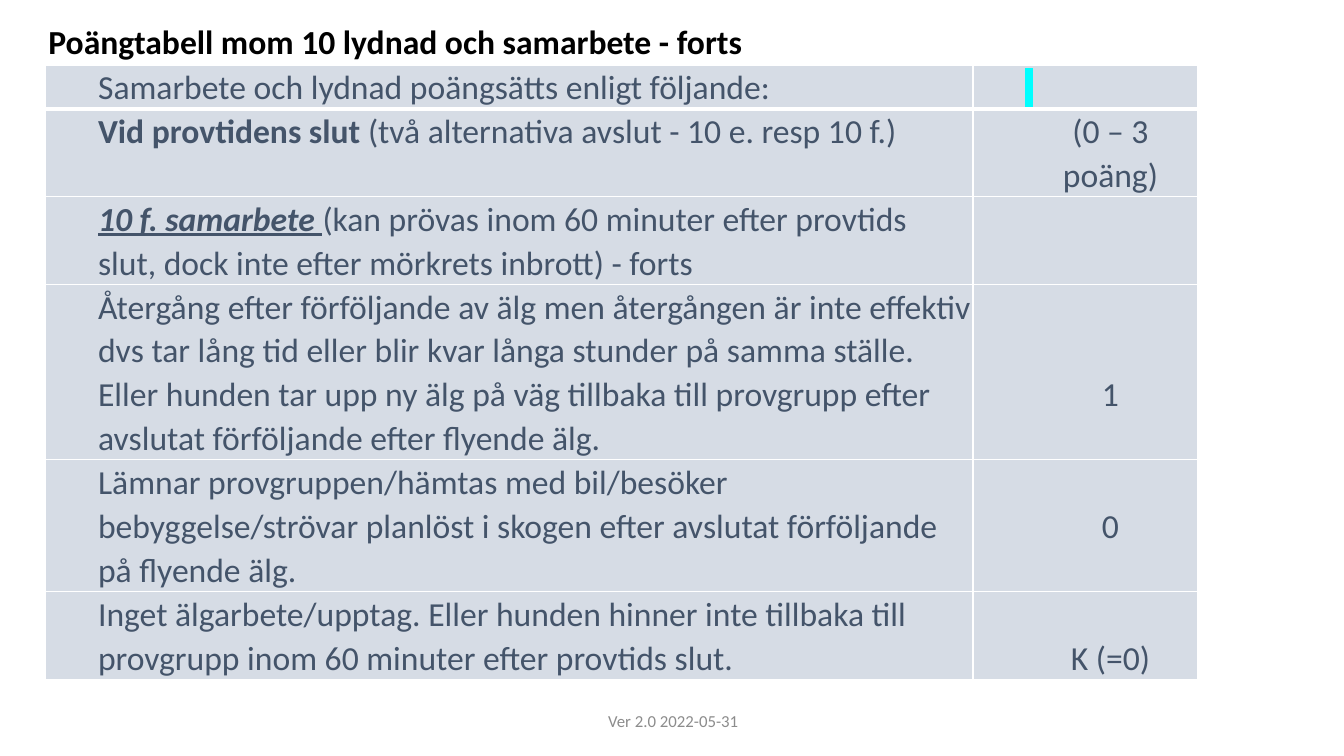
from lxml.etree import SubElement
from pptx import Presentation
from pptx.dml.color import RGBColor
from pptx.enum.text import MSO_ANCHOR, MSO_AUTO_SIZE, PP_ALIGN
from pptx.oxml import parse_xml
from pptx.oxml.ns import nsdecls, qn
from pptx.util import Inches, Pt

COLORS = {
    "title": "000000",
    "table_text": "44546A",
    "cell": "D6DCE5",
    "border": "FFFFFF",
    "footer": "8C8C8C",
    "marker": "00FFFF",
}
LINE_ROWS = 5.8
PLAIN = {"bold": False}
BOLD = {"bold": True}
HEADING = {"bold": True, "italic": True, "underline": True}

SCORE_ROWS = [
    (1, [("Samarbete och lydnad poängsätts enligt följande:", PLAIN)], None, 0),
    (2, [("Vid provtidens slut ", BOLD),
         ("(två alternativa avslut - 10 e. resp 10 f.)", PLAIN)], "(0 – 3 poäng)", 0),
    (2, [("10 f. samarbete ", HEADING),
         ("(kan prövas inom 60 minuter efter provtids slut, dock inte efter "
          "mörkrets inbrott) - forts", PLAIN)], None, 0),
    (4, [("Återgång efter förföljande av älg men återgången är inte effektiv dvs tar "
          "lång tid eller blir kvar långa stunder på samma ställe. Eller hunden tar upp "
          "ny älg på väg tillbaka till provgrupp efter avslutat förföljande efter "
          "flyende älg.", PLAIN)], "1", 2),
    (3, [("Lämnar provgruppen/hämtas med bil/besöker bebyggelse/strövar planlöst i "
          "skogen efter avslutat förföljande på flyende älg.", PLAIN)], "0", 1),
    (2, [("Inget älgarbete/upptag. Eller hunden hinner inte tillbaka till provgrupp "
          "inom 60 minuter efter provtids slut.", PLAIN)], "K (=0)", 1),
]


def apply(target, values):
    for name, value in values.items():
        setattr(target, name, value)


class SlideBuilder:
    font_name = "Calibri"

    def __init__(self, presentation):
        self.presentation = presentation
        self.slide = presentation.slides.add_slide(presentation.slide_layouts[5])

    def columns(self, count):
        return round(self.presentation.slide_width * count / 100)

    def rows(self, count):
        return round(self.presentation.slide_height * count / 100)

    def box(self, left, top, width, height):
        return {"left": self.columns(left), "top": self.rows(top),
                "width": self.columns(width), "height": self.rows(height)}

    def fill_paragraph(self, paragraph, runs, color, size, paragraph_format):
        apply(paragraph, paragraph_format)
        for text, run_format in runs:
            run = paragraph.add_run()
            run.text = text
            apply(run.font, {"name": self.font_name, "size": Pt(size), **run_format})
            run.font.color.rgb = RGBColor.from_string(COLORS[color])

    def title(self, text, box):
        shape = self.slide.shapes.title
        apply(shape, self.box(*box))
        apply(shape.text_frame, {"word_wrap": True, "auto_size": MSO_AUTO_SIZE.NONE,
                                 "vertical_anchor": MSO_ANCHOR.MIDDLE})
        self.fill_paragraph(shape.text_frame.paragraphs[0], [(text, BOLD)], "title", 24,
                            {"alignment": PP_ALIGN.LEFT, "line_spacing": 0.9})

    def footer(self, text, box):
        shape = self.slide.shapes.add_textbox(**self.box(*box))
        apply(shape.text_frame, {"word_wrap": True, "vertical_anchor": MSO_ANCHOR.MIDDLE})
        self.fill_paragraph(shape.text_frame.paragraphs[0], [(text, PLAIN)], "footer", 12,
                            {"alignment": PP_ALIGN.CENTER})

    def cell(self, cell, runs, paragraph_format, lines_above, top_width, bottom_width):
        properties = cell._tc.get_or_add_tcPr()
        for side, width in zip("LRTB", (1, 1, top_width, bottom_width)):
            line = SubElement(properties, qn("a:ln" + side), w=str(Pt(width)))
            fill = SubElement(line, qn("a:solidFill"))
            SubElement(fill, qn("a:srgbClr"), val=COLORS["border"])
        cell.fill.solid()
        cell.fill.fore_color.rgb = RGBColor.from_string(COLORS["cell"])
        apply(cell, {"margin_left": Inches(0.02), "margin_right": Inches(0.02),
                     "margin_top": self.rows(LINE_ROWS * lines_above), "margin_bottom": 0})
        paragraph = cell.text_frame.paragraphs[0]
        self.fill_paragraph(paragraph, runs, "table_text", 24,
                            {"line_spacing": 1.07, **paragraph_format})
        indent = paragraph._p.get_or_add_pPr()
        indent.set("marL", str(Inches(0.5)))
        indent.set("indent", "0")

    def mark(self, cell):
        run = cell.text_frame.paragraphs[0].runs[0]
        highlight = parse_xml(
            f'<a:highlight {nsdecls("a")}><a:srgbClr val="{COLORS["marker"]}"/></a:highlight>')
        run.font._element.find(qn("a:solidFill")).addnext(highlight)

    def score_table(self, entries, left, top, widths):
        height = LINE_ROWS * sum(entry[0] for entry in entries)
        frame = self.slide.shapes.add_table(
            len(entries), len(widths), **self.box(left, top, sum(widths), height))
        table = frame.table
        apply(table, {"first_row": False, "horz_banding": False})
        for column, width in zip(table.columns, widths):
            column.width = self.columns(width)
        for index, (lines, description, score, lines_above) in enumerate(entries):
            table.rows[index].height = self.rows(LINE_ROWS * lines)
            borders = (3 if index == 1 else 1, 3 if index == 0 else 1)
            self.cell(table.cell(index, 0), description, {}, 0, *borders)
            score_runs = [(score, PLAIN)] if score else []
            score_format = {"alignment": PP_ALIGN.CENTER, "space_after": Pt(8)}
            if index == 0:
                score_runs, score_format = [(" ", PLAIN)], {}
            self.cell(table.cell(index, 1), score_runs, score_format, lines_above, *borders)
        self.mark(table.cell(0, 1))


def main():
    presentation = Presentation()
    apply(presentation, {"slide_width": Inches(13.33), "slide_height": Inches(7.5)})
    builder = SlideBuilder(presentation)
    builder.title("Poängtabell mom 10 lydnad och samarbete - forts", (2.85, 2, 86.27, 7.6))
    builder.score_table(SCORE_ROWS, 3.4, 8.6, (69, 16.7))
    builder.footer("Ver 2.0 2022-05-31", (33.2, 92.7, 33.8, 5.3))
    presentation.save("out.pptx")


if __name__ == "__main__":
    main()
